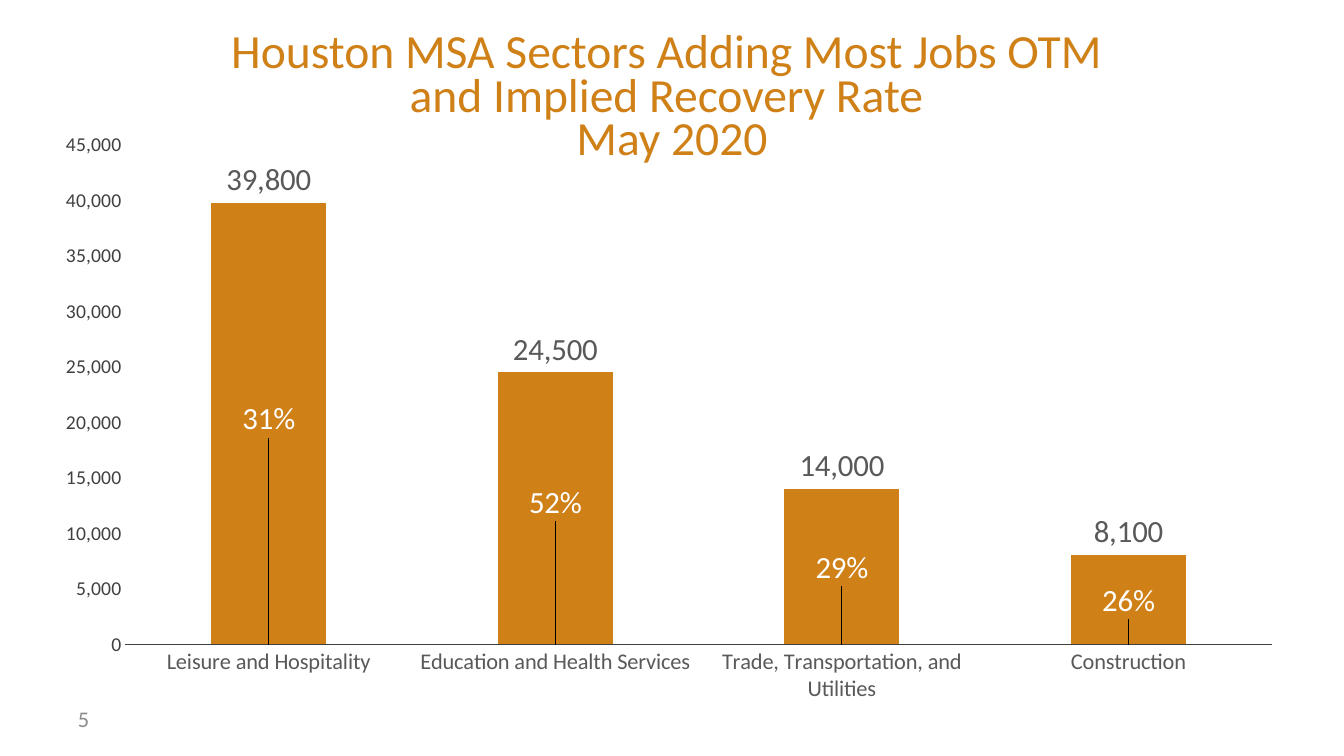
from lxml.etree import SubElement
from pptx import Presentation
from pptx.chart.data import CategoryChartData
from pptx.dml.color import RGBColor
from pptx.enum.chart import XL_CHART_TYPE, XL_LABEL_POSITION, XL_TICK_MARK
from pptx.enum.text import MSO_ANCHOR, PP_ALIGN
from pptx.oxml import parse_xml
from pptx.oxml.ns import nsdecls, qn
from pptx.util import Pt

PX = 9144000 / 1008
FACE = "Calibri"
GOLD = RGBColor(0xCF, 0x80, 0x17)
GREY = RGBColor(0x59, 0x59, 0x59)
DARK = RGBColor(0x40, 0x40, 0x40)
PALE = RGBColor(0x8C, 0x8C, 0x8C)
WHITE = RGBColor(0xFF, 0xFF, 0xFF)

SECTORS = ["Leisure and Hospitality", "Education and Health Services",
           "Trade, Transportation, and Utilities", "Construction"]
JOBS = [39800, 24500, 14000, 8100]
RATES = [0.31, 0.52, 0.29, 0.26]
SHIFTS = [-0.34, -0.2, -0.09, -0.035]  # rate labels, share of chart height


def emu(box):
    return [round(n * PX) for n in box]


def style(font, size, color):
    font.name = FACE
    font.size = Pt(size)
    font.bold = False
    font.color.rgb = color


def add_text(slide, box, text, size, color):
    frame = slide.shapes.add_textbox(*emu(box)).text_frame
    frame.word_wrap = True
    frame.vertical_anchor = MSO_ANCHOR.MIDDLE
    para = frame.paragraphs[0]
    para.text = text
    for run in para.runs:
        style(run.font, size, color)
    return frame


def add_title(slide, box):
    text = ("Houston MSA Sectors Adding Most Jobs OTM \v"
            "and Implied Recovery Rate \vMay 2020")
    frame = add_text(slide, box, text, 34, GOLD)
    frame.margin_left = frame.margin_right = 0
    frame.margin_top = frame.margin_bottom = 0
    frame.paragraphs[0].alignment = PP_ALIGN.CENTER
    frame.paragraphs[0].line_spacing = Pt(31)


def layout(**parts):
    node = parse_xml(f"<c:layout {nsdecls('c')}/>")
    inner = SubElement(node, qn("c:manualLayout"))
    for key, val in parts.items():
        SubElement(inner, qn(f"c:{key}")).set("val", str(val))
    return node


def set_labels(series, color, form):
    labels = series.data_labels
    labels.show_value = True
    labels.number_format = form
    labels.number_format_is_linked = False
    labels.position = XL_LABEL_POSITION.OUTSIDE_END
    style(labels.font, 22, color)


def move_label(series, index, shift):
    label = series.points[index].data_label
    label.position = XL_LABEL_POSITION.OUTSIDE_END
    style(label.font, 22, WHITE)
    # The value format and the offset both follow the label's index
    node = series.data_labels._element.findall(qn("c:dLbl"))[index]
    node.insert(1, parse_xml(
        f'<c:numFmt {nsdecls("c")} formatCode="0%" sourceLinked="0"/>'))
    node.insert(1, layout(x=0, y=shift))


def set_axes(chart):
    for axis, size, color in ((chart.category_axis, 16, GREY),
                              (chart.value_axis, 14, DARK)):
        axis.has_major_gridlines = False
        axis.major_tick_mark = axis.minor_tick_mark = XL_TICK_MARK.NONE
        style(axis.tick_labels.font, size, color)
    line = chart.category_axis.format.line
    line.color.rgb = DARK
    line.width = Pt(0.75)
    scale = chart.value_axis
    scale.minimum_scale, scale.maximum_scale = 0, 45000
    scale.major_unit = 5000
    scale.tick_labels.number_format = "#,##0"
    scale.tick_labels.number_format_is_linked = False
    scale.format.line.fill.background()


def add_bars(slide, box):
    data = CategoryChartData()
    data.categories = SECTORS
    data.add_series("Series 1", JOBS, "#,##0")
    data.add_series("Series 2", RATES, "0%")
    chart = slide.shapes.add_chart(
        XL_CHART_TYPE.COLUMN_CLUSTERED, *emu(box), data).chart
    chart.has_legend = chart.has_title = False
    chart.font.name = FACE
    chart.font.size = Pt(10)
    set_axes(chart)

    # Plot area
    area = chart._chartSpace.chart.plotArea
    for old in area.findall(qn("c:layout")):
        area.remove(old)
    area.insert(0, layout(layoutTarget="inner", xMode="edge", yMode="edge",
                          x=0.068, y=0.04, w=0.912, h=0.84))

    # Columns, with the rates as unfilled columns in the same place
    plot = chart.plots[0]
    plot.gap_width, plot.overlap = 149, 100
    plot.vary_by_categories = False
    jobs, rates = plot.series
    jobs.format.fill.solid()
    jobs.format.fill.fore_color.rgb = GOLD
    rates.format.fill.background()
    set_labels(jobs, GREY, "#,##0")
    set_labels(rates, WHITE, "0%")
    for index, shift in enumerate(SHIFTS):
        move_label(rates, index, shift)


def main():
    deck = Presentation()
    deck.slide_width, deck.slide_height = emu((1344, 756))
    slide = deck.slides.add_slide(deck.slide_layouts[6])
    add_title(slide, (0, 29, 1344, 142))
    add_text(slide, (68, 699, 302, 40), "5", 16, PALE)
    add_bars(slide, (40, 121, 1257, 595))
    deck.save("out.pptx")


if __name__ == "__main__":
    main()
